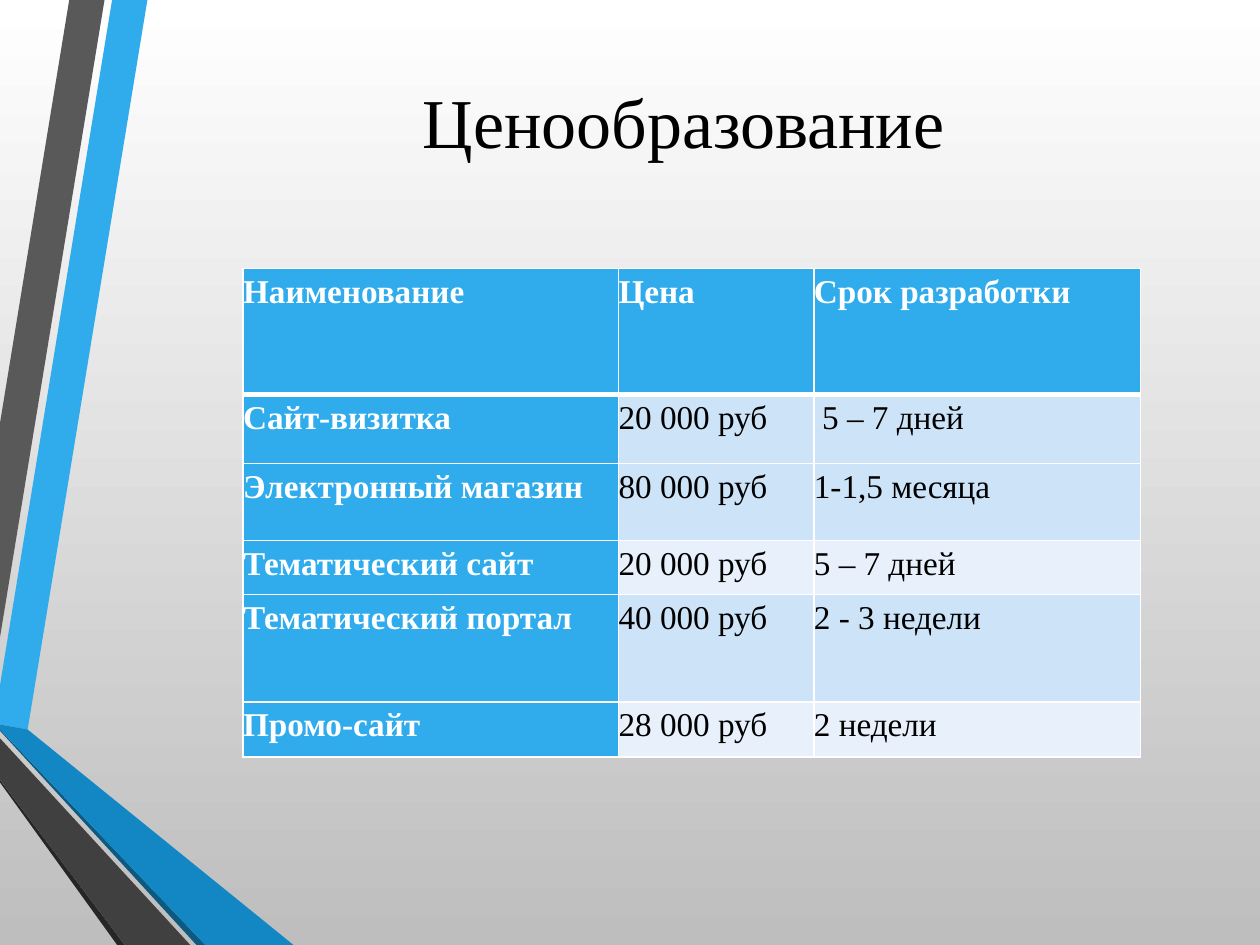
import pptx
import pptx.dml.color
import pptx.enum.text
import pptx.oxml.ns
import pptx.util
from dataclasses import dataclass
from lxml import etree


@dataclass(frozen=True)
class Theme:
    font: str = "Times New Roman"
    title_size: int = 40
    table_size: int = 19
    white: str = "FFFFFF"
    black: str = "000000"
    backdrop_end: str = "BEBEBE"
    accent: str = "30ACEC"
    accent_mid: str = "1287C3"
    accent_dark: str = "0C5A82"
    grey: str = "595959"
    grey_mid: str = "404040"
    grey_dark: str = "262626"
    band_dark: str = "CDE3F8"
    band_light: str = "E8F1FB"


theme = Theme()
rgb = pptx.dml.color.RGBColor.from_string


def style_text(para, size, color, bold=False):
    for span in para.runs:
        span.font.name = theme.font
        span.font.size = pptx.util.Pt(size)
        span.font.bold = bold
        span.font.color.rgb = rgb(color)


def add_border(cell, side, points):
    """Draw one white cell edge; side is L, R, T or B."""
    line = etree.SubElement(cell._tc.get_or_add_tcPr(), pptx.oxml.ns.qn("a:ln" + side))
    line.set("w", str(pptx.util.Pt(points)))
    fill = etree.SubElement(line, pptx.oxml.ns.qn("a:solidFill"))
    etree.SubElement(fill, pptx.oxml.ns.qn("a:srgbClr")).set("val", theme.white)


deck = pptx.Presentation()
deck.slide_width = pptx.util.Inches(10)
deck.slide_height = pptx.util.Inches(7.5)
unit = deck.slide_width // 1000  # the slide is a grid of 1000 columns by 750 rows
page = deck.slides.add_slide(deck.slide_layouts[6])

backdrop = page.background.fill
backdrop.gradient()
backdrop.gradient_angle = 270
for stop, position, color in zip(backdrop.gradient_stops, (0, 1), (theme.white, theme.backdrop_end)):
    stop.position = position
    stop.color.rgb = rgb(color)

# Folded ribbons along the left edge, from back to front
ribbons = [
    (theme.accent, [(0, 544), (0, 575), (22, 579), (117, 0), (89, 0)]),
    (theme.grey, [(83, 0), (55, 0), (0, 336), (0, 506)]),
    (theme.grey_dark, [(0, 619), (0, 621), (93, 750), (99, 750)]),
    (theme.accent_dark, [(0, 579), (0, 580), (156, 750), (163, 750)]),
    (theme.accent_mid, [(0, 579), (163, 750), (233, 750), (22, 579), (0, 575)]),
    (theme.grey_mid, [(0, 619), (99, 750), (151, 750), (0, 586)]),
]
for color, corners in ribbons:
    outline = page.shapes.build_freeform(*corners[0], scale=unit)
    outline.add_line_segments(corners[1:], close=True)
    ribbon = outline.convert_to_shape()
    ribbon.shadow.inherit = False
    ribbon.fill.solid()
    ribbon.fill.fore_color.rgb = rgb(color)
    ribbon.line.fill.background()

title_box = page.shapes.add_textbox(143 * unit, 0, 799 * unit, 192 * unit)
title_box.text_frame.word_wrap = True
title_box.text_frame.vertical_anchor = pptx.enum.text.MSO_ANCHOR.MIDDLE
title_box.text_frame.text = "Ценообразование"
title_para = title_box.text_frame.paragraphs[0]
title_para.alignment = pptx.enum.text.PP_ALIGN.CENTER
style_text(title_para, theme.title_size, theme.black)

prices = [
    ("Наименование", "Цена", "Срок разработки"),
    ("Сайт-визитка", "20 000 руб", " 5 – 7 дней"),
    ("Электронный магазин", "80 000 руб", "1-1,5 месяца"),
    ("Тематический сайт", "20 000 руб", "5 – 7 дней"),
    ("Тематический портал", "40 000 руб", "2 - 3 недели"),
    ("Промо-сайт", "28 000 руб", "2 недели"),
]
column_widths = [298, 155, 259]
row_heights = [100, 55, 61, 43, 85, 44]
row_fills = [theme.accent, theme.band_dark, theme.band_dark,
             theme.band_light, theme.band_dark, theme.band_light]

table = page.shapes.add_table(
    len(prices), len(column_widths), 193 * unit, 213 * unit,
    sum(column_widths) * unit, sum(row_heights) * unit).table
for column, width in zip(table.columns, column_widths):
    column.width = width * unit
for row, height in zip(table.rows, row_heights):
    row.height = height * unit

for row_index, entries in enumerate(prices):
    for column_index, entry in enumerate(entries):
        is_heading = row_index == 0 or column_index == 0
        cell = table.cell(row_index, column_index)
        cell.margin_left = cell.margin_right = cell.margin_top = cell.margin_bottom = 0
        add_border(cell, "L", 1)
        add_border(cell, "R", 1)
        add_border(cell, "T", 3 if row_index == 1 else 1)
        add_border(cell, "B", 3 if row_index == 0 else 1)
        cell.fill.solid()
        cell.fill.fore_color.rgb = rgb(theme.accent if is_heading else row_fills[row_index])
        cell.text_frame.text = entry
        para = cell.text_frame.paragraphs[0]
        para.line_spacing = 1.15
        para.space_after = pptx.util.Pt(10)
        style_text(para, theme.table_size, theme.white if is_heading else theme.black, is_heading)

deck.save("out.pptx")
